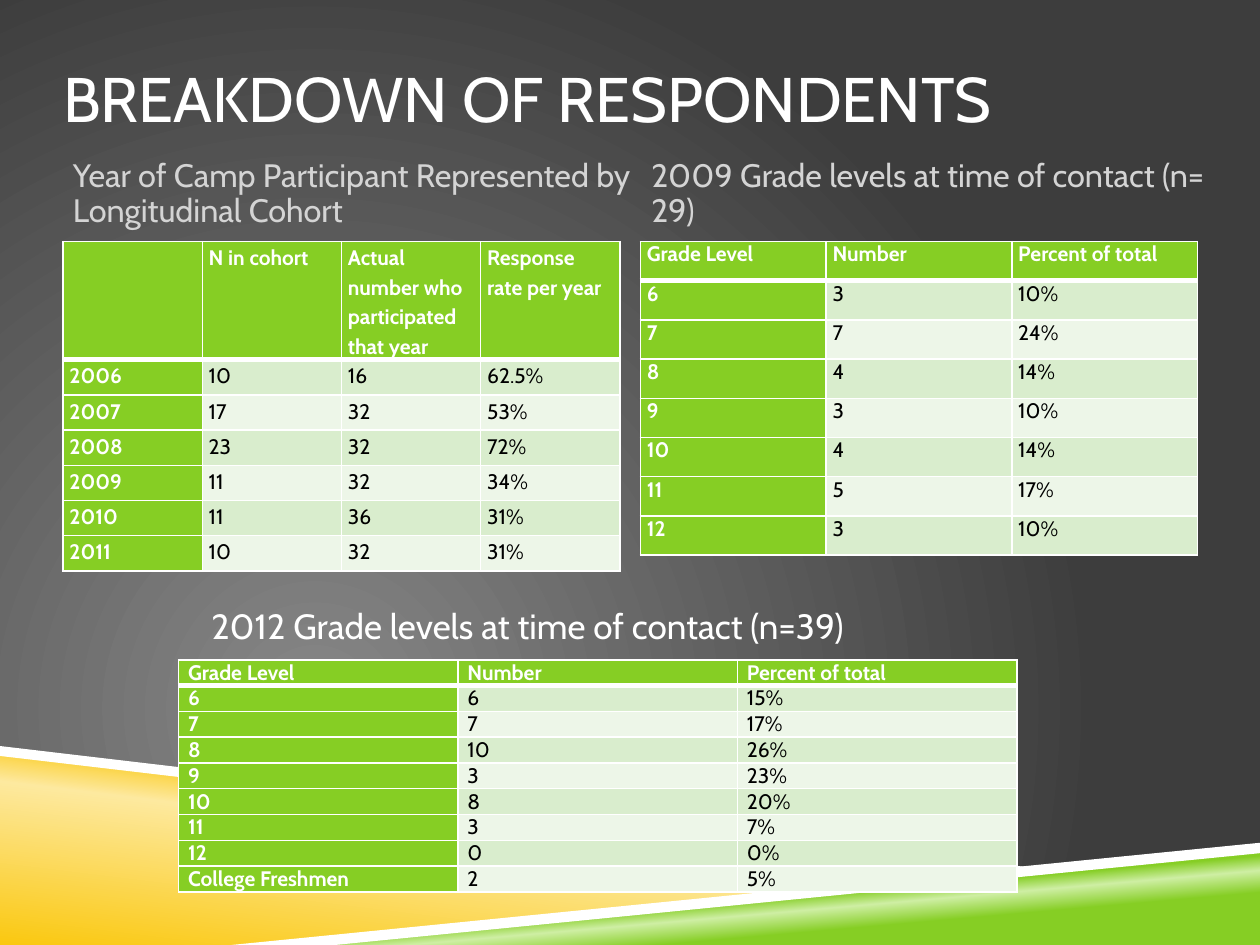
from pptx import Presentation
from pptx.dml.color import RGBColor
from pptx.enum.text import MSO_ANCHOR, MSO_AUTO_SIZE, PP_ALIGN
from pptx.oxml import parse_xml
from pptx.oxml.ns import nsdecls, qn
from pptx.util import Cm, Pt

LEFT = PP_ALIGN.LEFT
MIDDLE, BOTTOM = MSO_ANCHOR.MIDDLE, MSO_ANCHOR.BOTTOM
NO_FIT = MSO_AUTO_SIZE.NONE
COMPARISON_LAYOUT = 4

COHORT_ROWS = [
    ["", "N in cohort", "Actual number who participated that year", "Response rate per year"],
    ["2006", "10", "16", "62.5%"],
    ["2007", "17", "32", "53%"],
    ["2008", "23", "32", "72%"],
    ["2009", "11", "32", "34%"],
    ["2010", "11", "36", "31%"],
    ["2011", "10", "32", "31%"],
]
GRADE_HEADER = ["Grade Level", "Number", "Percent of total"]
GRADES_2009 = [
    GRADE_HEADER,
    ["6", "3", "10%"],
    ["7", "7", "24%"],
    ["8", "4", "14%"],
    ["9", "3", "10%"],
    ["10", "4", "14%"],
    ["11", "5", "17%"],
    ["12", "3", "10%"],
]
GRADES_2012 = [
    GRADE_HEADER,
    ["6", "6", "15%"],
    ["7", "7", "17%"],
    ["8", "10", "26%"],
    ["9", "3", "23%"],
    ["10", "8", "20%"],
    ["11", "3", "7%"],
    ["12", "0", "0%"],
    ["College Freshmen", "2", "5%"],
]


def color(value):
    return RGBColor.from_string(value)


def apply(target, values):
    for name, value in values.items():
        setattr(target, name, value)


def set_gradient(parent, stops, direction):
    """Swap the solid fill under parent for a gradient; direction is its XML ending."""
    marks = "".join(
        f'<a:gs pos="{percent * 1000}"><a:srgbClr val="{value}"/></a:gs>'
        for percent, value in stops
    )
    gradient = parse_xml(
        f'<a:gradFill {nsdecls("a")} rotWithShape="1"><a:gsLst>{marks}</a:gsLst>'
        f"{direction}</a:gradFill>"
    )
    parent.replace(parent.find(qn("a:solidFill")), gradient)


def set_borders(cell, widths):
    """Draw white borders, with widths in points for left, right, top and bottom."""
    properties = cell._tc.get_or_add_tcPr()
    for index, (side, width) in enumerate(zip("LRTB", widths)):
        border = parse_xml(
            f'<a:ln{side} {nsdecls("a")} w="{Pt(width)}"><a:solidFill>'
            f'<a:srgbClr val="FFFFFF"/></a:solidFill></a:ln{side}>'
        )
        properties.insert(index, border)


class RespondentSlide:
    FONT = "Cabin"
    WHITE, BLACK, GREY = "FFFFFF", "000000", "D4D4D4"
    GREEN, BANDS = "86CE24", ("D9EDCD", "EDF6E8")

    def __init__(self, deck):
        self.page = deck.slides.add_slide(deck.slide_layouts[COMPARISON_LAYOUT])

    def background(self, stops):
        fill = self.page.background.fill
        fill.solid()
        fill.fore_color.rgb = color(self.BLACK)
        properties = self.page._element.find(".//" + qn("p:bgPr"))
        set_gradient(properties, stops,
                     '<a:path path="circle"><a:fillToRect l="50000" t="100000" '
                     'r="100000" b="50000"/></a:path>')

    def wedge(self, points, stops=None, angle=0):
        corners = [(Cm(x), Cm(y)) for x, y in points]
        builder = self.page.shapes.build_freeform(*corners[0])
        builder.add_line_segments(corners[1:], close=True)
        shape = builder.convert_to_shape()
        shape.shadow.inherit = False
        shape.line.fill.background()
        shape.fill.solid()
        shape.fill.fore_color.rgb = color(self.WHITE)
        if stops:
            set_gradient(shape._element.spPr, stops,
                         f'<a:lin ang="{angle * 60000}" scaled="0"/>')

    def add_span(self, para, text, size, shade, bold=False):
        span = para.add_run()
        span.text = text
        apply(span.font, {"name": self.FONT, "size": Pt(size), "bold": bold})
        span.font.color.rgb = color(shade)

    def placeholder(self, index, text, place, size, shade, anchor, spacing=1.0):
        box = self.page.placeholders[index]
        apply(box, dict(zip(("left", "top", "width", "height"), map(Cm, place))))
        frame = box.text_frame
        apply(frame, {"margin_left": 0, "margin_right": 0, "margin_top": Cm(0.13),
                      "margin_bottom": Cm(0.13), "vertical_anchor": anchor,
                      "word_wrap": True, "auto_size": NO_FIT})
        para = frame.paragraphs[0]
        apply(para, {"alignment": LEFT, "line_spacing": spacing, "space_before": Pt(0)})
        self.add_span(para, text, size, shade)

    def label(self, text, place, size):
        box = self.page.shapes.add_textbox(*map(Cm, place))
        box.text_frame.word_wrap = True
        self.add_span(box.text_frame.paragraphs[0], text, size, self.WHITE)

    def table(self, rows, place, header_height, row_height, margin, spacing=1.0):
        """Add a table at place, which is left, top and width."""
        left, top, width = map(Cm, place)
        height = Cm(header_height + row_height * (len(rows) - 1))
        grid = self.page.shapes.add_table(
            len(rows), len(rows[0]), left, top, width, height).table
        grid.horz_banding = False
        for r, values in enumerate(rows):
            grid.rows[r].height = Cm(row_height if r else header_height)
            for c, text in enumerate(values):
                cell = grid.cell(r, c)
                heading = r == 0 or c == 0
                apply(cell, {"margin_left": Cm(margin), "margin_right": Cm(margin),
                             "margin_top": 0, "margin_bottom": 0})
                cell.fill.solid()
                cell.fill.fore_color.rgb = color(
                    self.GREEN if heading else self.BANDS[(r - 1) % 2])
                set_borders(cell, (1, 1, 3 if r == 1 else 1, 3 if r == 0 else 1))
                para = cell.text_frame.paragraphs[0]
                para.line_spacing = spacing
                if text:
                    self.add_span(para, text, 12,
                                  self.WHITE if heading else self.BLACK, heading)

    def remove_empty_placeholders(self):
        for box in list(self.page.placeholders):
            if not box.has_text_frame or not box.text_frame.text:
                box._element.getparent().remove(box._element)


def main():
    deck = Presentation()
    deck.slide_width, deck.slide_height = Cm(25.4), Cm(19.05)
    slide = RespondentSlide(deck)

    slide.background([(0, "878787"), (100, "3D3D3D")])
    slide.wedge([(5.03, 19.05), (25.4, 17.07), (25.4, 19.05)],
                [(28, "86CE24"), (40, "CFEFA4"), (48, "86CE24")], 265)
    slide.wedge([(0, 15.16), (20.12, 17.58), (5.08, 19.05), (0, 19.05)],
                [(0, "FAC810"), (52, "FDE99F"), (66, "FAC810")], 277)
    slide.wedge([(0, 15.04), (0, 15.24), (20.07, 17.6), (21.13, 17.53)])
    slide.wedge([(25.4, 16.99), (4.67, 19.05), (6.76, 19.05), (25.4, 17.2)])

    slide.placeholder(0, "BREAKDOWN OF RESPONDENTS", (1.27, 0.76, 22.86, 2.41),
                      36, slide.WHITE, MIDDLE)
    captions = [
        (1, "Year of Camp Participant Represented by Longitudinal Cohort", 1.47),
        (3, "2009 Grade levels at time of contact (n= 29)", 13.13),
    ]
    for index, text, left in captions:
        slide.placeholder(index, text, (left, 2.97, 11.23, 1.78),
                          18.5, slide.GREY, BOTTOM, 0.9)
    slide.remove_empty_placeholders()

    slide.table(COHORT_ROWS, (1.27, 4.87, 11.23), 2.38, 0.71, 0.13, 1.15)
    slide.table(GRADES_2009, (12.91, 4.87, 11.23), 0.79, 0.79, 0.13)
    slide.table(GRADES_2012, (3.6, 13.3, 16.9), 0.52, 0.52, 0.19)
    slide.label("2012 Grade levels at time of contact (n=39)",
                (4.01, 12.07, 16.31, 1.11), 20)

    deck.save("out.pptx")


if __name__ == "__main__":
    main()
